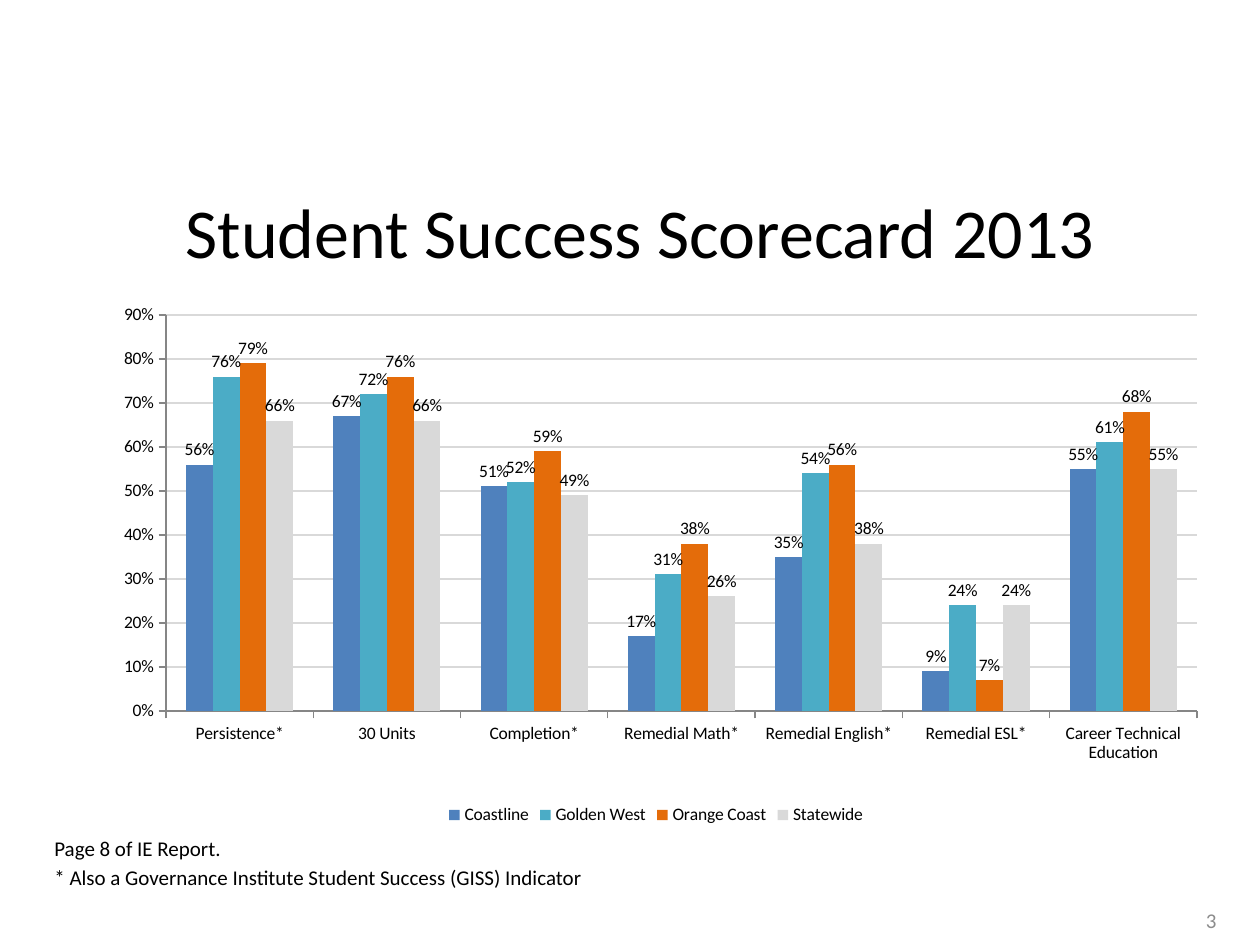
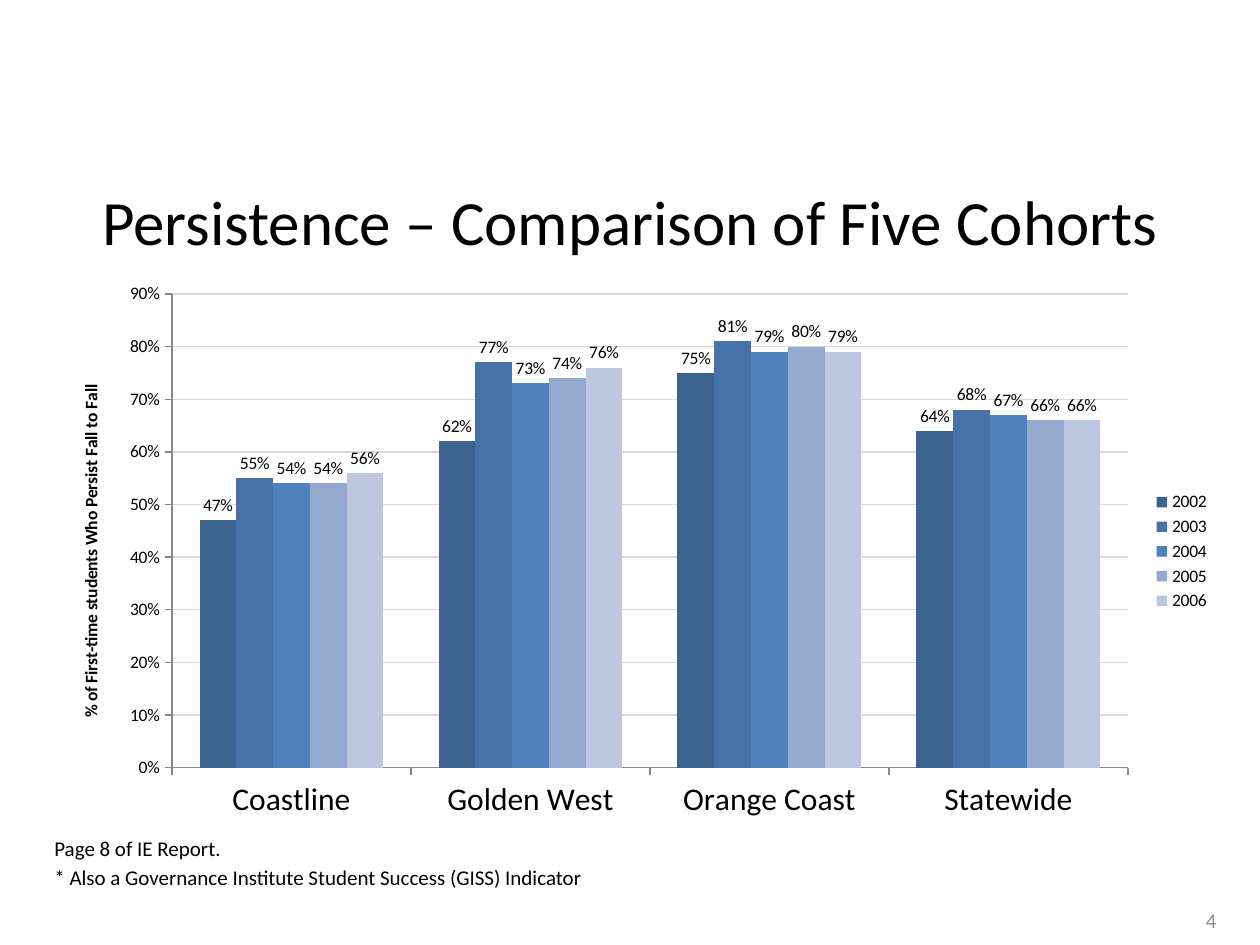
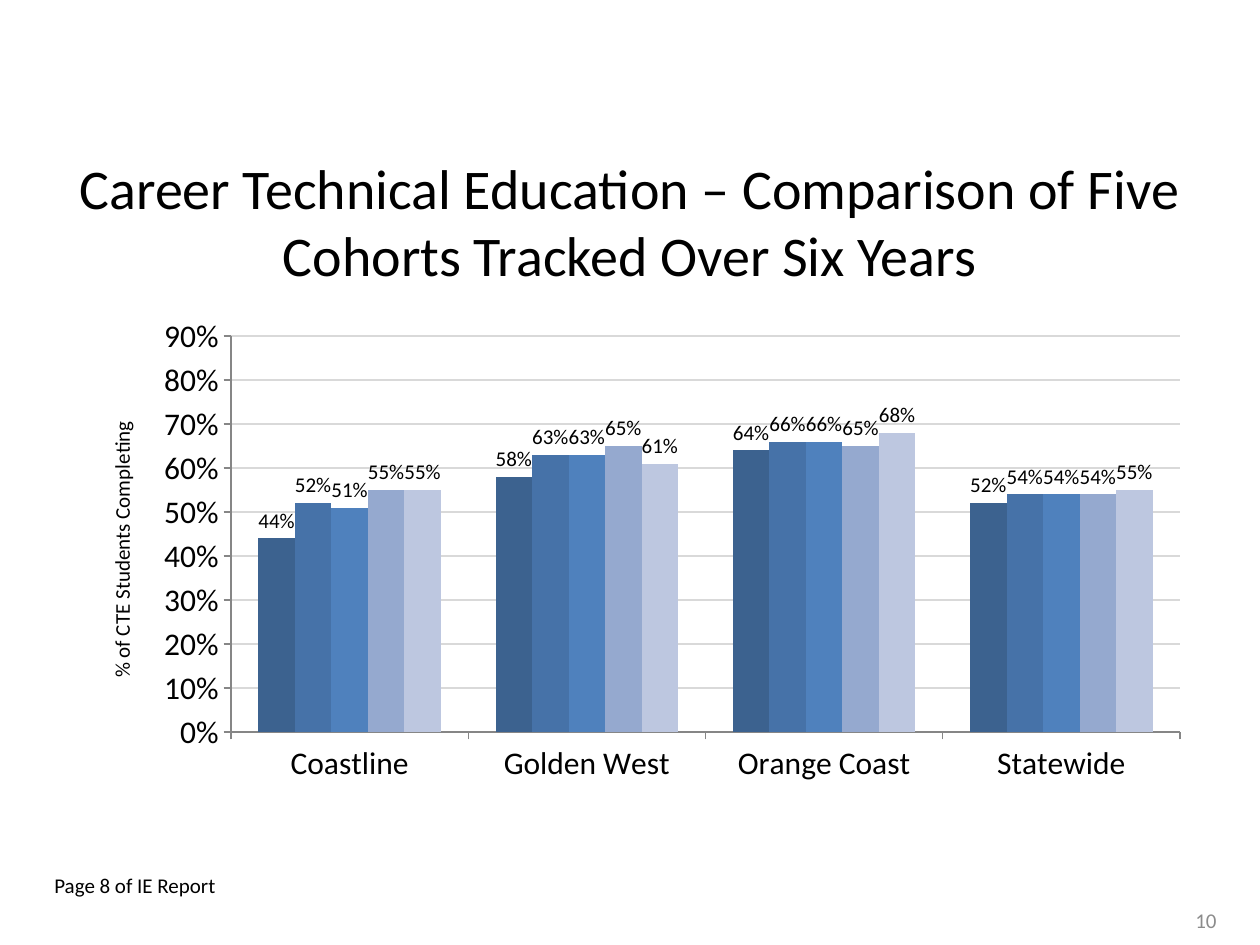
from dataclasses import dataclass

from lxml import etree
from pptx import Presentation
from pptx.chart.data import CategoryChartData
from pptx.dml.color import RGBColor
from pptx.enum.chart import XL_CHART_TYPE, XL_LABEL_POSITION, XL_LEGEND_POSITION, XL_TICK_MARK
from pptx.enum.text import MSO_ANCHOR, MSO_AUTO_SIZE, PP_ALIGN
from pptx.oxml.ns import qn
from pptx.util import Emu, Pt

COLUMNS = XL_CHART_TYPE.COLUMN_CLUSTERED
OUTSIDE_END = XL_LABEL_POSITION.OUTSIDE_END
LEGEND_BOTTOM = XL_LEGEND_POSITION.BOTTOM
LEGEND_RIGHT = XL_LEGEND_POSITION.RIGHT
TICK_OUTSIDE = XL_TICK_MARK.OUTSIDE
TOP, MIDDLE = MSO_ANCHOR.TOP, MSO_ANCHOR.MIDDLE
LEFT, CENTER, RIGHT = PP_ALIGN.LEFT, PP_ALIGN.CENTER, PP_ALIGN.RIGHT
NO_AUTOFIT = MSO_AUTO_SIZE.NONE

PIXELS_PER_INCH = 126
EMU_PER_PIXEL = 914400 / PIXELS_PER_INCH
TITLE_ONLY = 5
PERCENT = "0%"


@dataclass(frozen=True)
class Theme:
    font: str = "Calibri"
    text: str = "000000"
    muted: str = "8C8C8C"
    axis: str = "868686"
    grid: str = "D9D9D9"
    colleges: tuple = ("4F81BD", "4BACC6", "E46C0A", "D9D9D9")
    cohorts: tuple = ("3C628F", "4672A8", "4F81BD", "95A9CF", "BDC7E0")
    title_large: int = 40
    title_medium: int = 36
    title_small: int = 32
    chart_large: int = 18
    note: int = 12
    chart_small: int = 10
    paragraph_gap: float = 2.4


THEME = Theme()
COLLEGES = ["Coastline", "Golden West", "Orange Coast", "Statewide"]
REPORT_NOTES = [
    "Page 8 of IE Report.",
    "* Also a Governance Institute Student Success (GISS) Indicator",
]
SCORECARD_MEASURES = [
    "Persistence*", "30 Units", "Completion*", "Remedial Math*",
    "Remedial English*", "Remedial ESL*", "Career Technical Education",
]
SCORECARD = {
    "Coastline": (0.56, 0.67, 0.51, 0.17, 0.35, 0.09, 0.55),
    "Golden West": (0.76, 0.72, 0.52, 0.31, 0.54, 0.24, 0.61),
    "Orange Coast": (0.79, 0.76, 0.59, 0.38, 0.56, 0.07, 0.68),
    "Statewide": (0.66, 0.66, 0.49, 0.26, 0.38, 0.24, 0.55),
}
PERSISTENCE = {
    "2002": (0.47, 0.62, 0.75, 0.64),
    "2003": (0.55, 0.77, 0.81, 0.68),
    "2004": (0.54, 0.73, 0.79, 0.67),
    "2005": (0.54, 0.74, 0.8, 0.66),
    "2006": (0.56, 0.76, 0.79, 0.66),
}
CAREER_EDUCATION = {
    "Series 1": (0.44, 0.58, 0.64, 0.52),
    "Series 2": (0.52, 0.63, 0.66, 0.54),
    "Series 3": (0.51, 0.63, 0.66, 0.54),
    "Series 4": (0.55, 0.65, 0.65, 0.54),
    "Series 5": (0.55, 0.61, 0.68, 0.55),
}


def px(length):
    return Emu(round(length * EMU_PER_PIXEL))


def style_font(font, size, color=THEME.text, bold=False):
    font.name = THEME.font
    font.size = Pt(size)
    font.bold = bold
    font.color.rgb = RGBColor.from_string(color)


def write_text(shape, lines, size, color=THEME.text, align=LEFT, anchor=TOP):
    frame = shape.text_frame
    frame.text = "\n".join(lines)
    frame.word_wrap = True
    frame.auto_size = NO_AUTOFIT
    frame.vertical_anchor = anchor
    for index, paragraph in enumerate(frame.paragraphs):
        paragraph.alignment = align
        if index:
            paragraph.space_before = Pt(THEME.paragraph_gap)
        for run in paragraph.runs:
            style_font(run.font, size, color)


def add_text(slide, box, lines, size, **style):
    shape = slide.shapes.add_textbox(*map(px, box))
    write_text(shape, lines, size, **style)


def add_titled_slide(presentation, title, box, size, number):
    slide = presentation.slides.add_slide(presentation.slide_layouts[TITLE_ONLY])
    shape = slide.shapes.title
    shape.left, shape.top, shape.width, shape.height = map(px, box)
    write_text(shape, [title], size, align=CENTER, anchor=MIDDLE)
    add_text(slide, (935, 895, 294, 50), [str(number)], THEME.note,
             color=THEME.muted, align=RIGHT, anchor=MIDDLE)
    return slide


def place_plot(chart, chart_box, plot_box):
    left, top, width, height = chart_box
    plot_left, plot_top, plot_width, plot_height = plot_box
    settings = {
        "layoutTarget": "inner",
        "xMode": "edge",
        "yMode": "edge",
        "x": (plot_left - left) / width,
        "y": (plot_top - top) / height,
        "w": plot_width / width,
        "h": plot_height / height,
    }
    plot_area = chart.element.find(".//" + qn("c:plotArea"))
    layout = plot_area.find(qn("c:layout"))
    if layout is None:
        layout = etree.Element(qn("c:layout"))
        plot_area.insert(0, layout)
    manual = etree.SubElement(layout, qn("c:manualLayout"))
    for name, value in settings.items():
        etree.SubElement(manual, qn("c:" + name)).set("val", str(value))


def style_axis(axis, size):
    axis.major_tick_mark = TICK_OUTSIDE
    axis.format.line.color.rgb = RGBColor.from_string(THEME.axis)
    axis.format.line.width = Pt(0.75)
    style_font(axis.tick_labels.font, size)


def style_value_axis(axis, size):
    style_axis(axis, size)
    axis.minimum_scale = 0
    axis.maximum_scale = 0.9
    axis.major_unit = 0.1
    axis.tick_labels.number_format = PERCENT
    axis.tick_labels.number_format_is_linked = False
    axis.has_major_gridlines = True
    gridline = axis.major_gridlines.format.line
    gridline.color.rgb = RGBColor.from_string(THEME.grid)
    gridline.width = Pt(0.75)


def add_axis_title(chart, text, size, bold):
    frame = chart.value_axis.axis_title.text_frame
    frame.text = text
    style_font(frame.paragraphs[0].runs[0].font, size, bold=bold)


def style_series(plot, colors, label_size):
    plot.gap_width = 150
    plot.overlap = 0
    plot.vary_by_categories = False
    for series, color in zip(plot.series, colors):
        series.format.fill.solid()
        series.format.fill.fore_color.rgb = RGBColor.from_string(color)
        labels = series.data_labels
        labels.show_value = True
        labels.position = OUTSIDE_END
        labels.number_format = PERCENT
        labels.number_format_is_linked = False
        style_font(labels.font, label_size)


def add_column_chart(slide, box, plot_box, categories, values, colors,
                     category_size, value_size, label_size, legend=None):
    data = CategoryChartData(number_format=PERCENT)
    data.categories = categories
    for name, series_values in values.items():
        data.add_series(name, series_values)
    chart = slide.shapes.add_chart(COLUMNS, *map(px, box), data).chart
    style_font(chart.font, value_size)
    chart.has_title = False
    chart.has_legend = legend is not None
    if chart.has_legend:
        chart.legend.position = legend
        chart.legend.include_in_layout = False
        style_font(chart.legend.font, value_size)
    style_axis(chart.category_axis, category_size)
    style_value_axis(chart.value_axis, value_size)
    style_series(chart.plots[0], colors, label_size)
    place_plot(chart, box, plot_box)
    return chart


def add_scorecard_slide(presentation):
    slide = add_titled_slide(presentation, "Student Success Scorecard 2013",
                             (73, 168, 1134, 126), THEME.title_large, 3)
    add_column_chart(slide, (89, 273, 1134, 557), (166, 315, 1031, 396),
                     SCORECARD_MEASURES, SCORECARD, THEME.colleges,
                     THEME.chart_small, THEME.chart_small, THEME.chart_small,
                     LEGEND_BOTTOM)
    add_text(slide, (42, 829, 620, 73), REPORT_NOTES, THEME.note)


def add_persistence_slide(presentation):
    slide = add_titled_slide(presentation, "Persistence – Comparison of Five Cohorts",
                             (63, 168, 1134, 105), THEME.title_medium, 4)
    chart = add_column_chart(slide, (53, 273, 1170, 557), (172, 294, 956, 474),
                             COLLEGES, PERSISTENCE, THEME.cohorts,
                             THEME.chart_large, THEME.chart_small, THEME.chart_small,
                             LEGEND_RIGHT)
    add_axis_title(chart, "% of First-time students Who Persist Fall to Fall",
                   THEME.chart_small, bold=True)
    add_text(slide, (42, 829, 620, 73), REPORT_NOTES, THEME.note)


def add_career_education_slide(presentation):
    slide = add_titled_slide(
        presentation,
        "Career Technical Education – Comparison of Five Cohorts Tracked Over Six Years",
        (63, 168, 1134, 105), THEME.title_small, 10)
    add_text(slide, (42, 866, 620, 37), ["Page 8 of IE Report"], THEME.note)
    chart = add_column_chart(slide, (63, 294, 1134, 557), (231, 336, 949, 396),
                             COLLEGES, CAREER_EDUCATION, THEME.cohorts,
                             THEME.chart_large, THEME.chart_large, THEME.note)
    add_axis_title(chart, "% of CTE Students Completing", THEME.note, bold=False)


def main():
    presentation = Presentation()
    presentation.slide_width = px(1260)
    presentation.slide_height = px(945)
    add_scorecard_slide(presentation)
    add_persistence_slide(presentation)
    add_career_education_slide(presentation)
    presentation.save("out.pptx")


if __name__ == "__main__":
    main()
